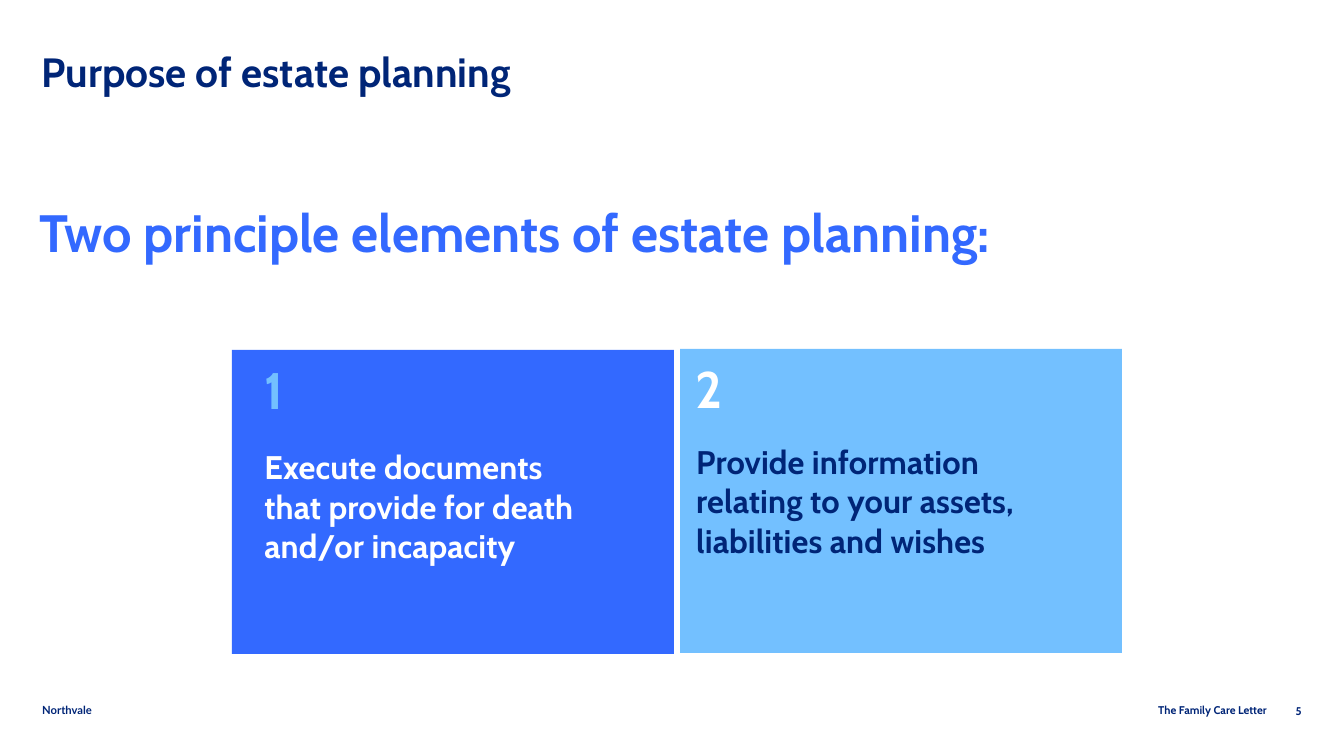
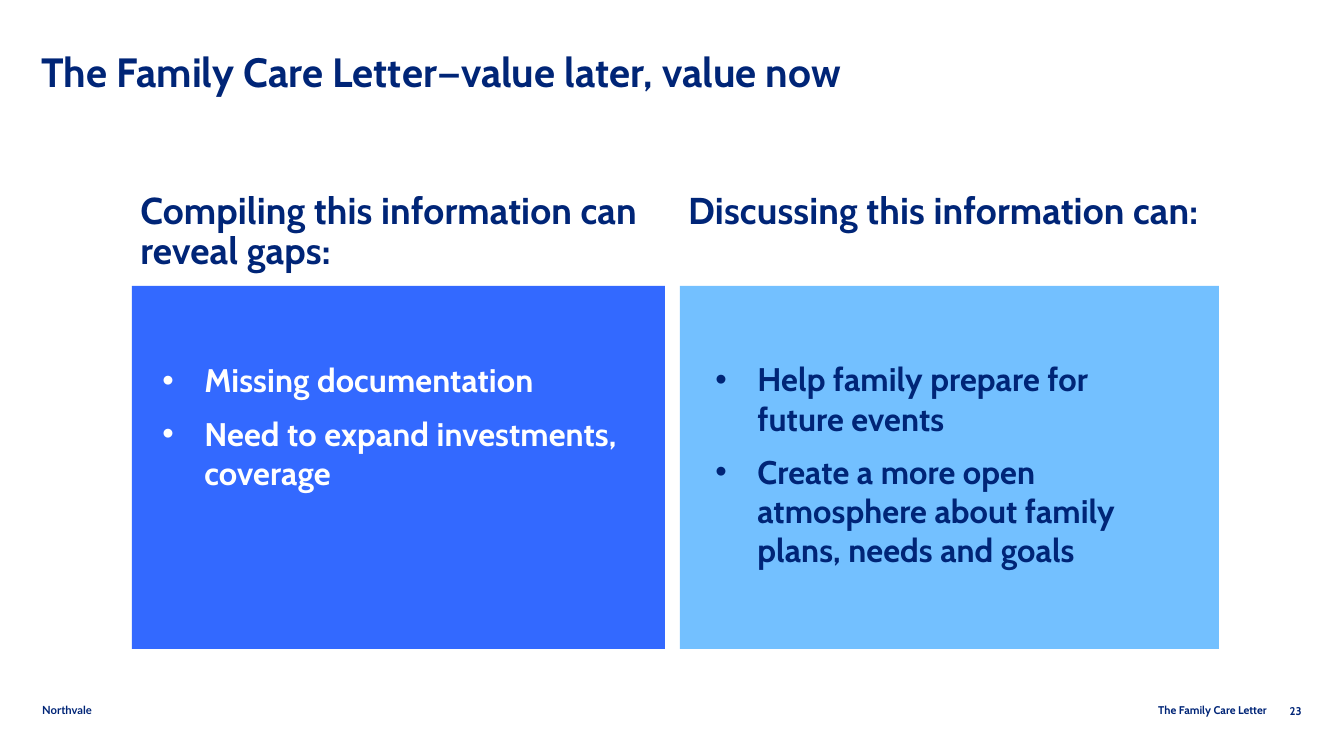
from dataclasses import dataclass

from lxml.etree import SubElement
from pptx import Presentation
from pptx.dml.color import RGBColor
from pptx.enum.shapes import MSO_CONNECTOR, MSO_SHAPE
from pptx.enum.text import MSO_ANCHOR, MSO_AUTO_SIZE, PP_ALIGN
from pptx.oxml.ns import qn
from pptx.slide import Slide
from pptx.util import Emu, Pt

DPI = 84
COLORS = {"navy": "002577", "blue": "3369FF", "sky": "73C0FF",
          "white": "FFFFFF", "rule": "336AFF"}
LEAD = Pt(33.6)
HANG = 42
Box = tuple[int, int, int, int]


@dataclass
class Panel:
    box: Box
    color: str


@dataclass
class Text:
    box: Box
    lines: list[str]
    size: float
    color: str = "navy"
    lead: float | Pt = LEAD
    track: int = 10
    holder: int | None = None
    bullet: bool = False
    font: str = "Cabin"
    align: PP_ALIGN = PP_ALIGN.LEFT
    anchor: MSO_ANCHOR = MSO_ANCHOR.TOP


@dataclass
class Page:
    title: str
    number: str
    panels: list[Panel]
    texts: list[Text]


def px(n: int) -> Emu:
    return Emu(round(n * 914400 / DPI))


def rgb(name: str) -> RGBColor:
    return RGBColor.from_string(COLORS[name])


def set_bullet(para, on: bool) -> None:
    props = para._p.get_or_add_pPr()
    hang = px(HANG) if on else 0
    props.set("marL", str(hang))
    props.set("indent", str(-hang))
    if on:
        SubElement(props, qn("a:buFont"), typeface="Arial")
        SubElement(props, qn("a:buChar"), char="•")
    else:
        SubElement(props, qn("a:buNone"))


def add_panel(slide: Slide, panel: Panel) -> None:
    shape = slide.shapes.add_shape(MSO_SHAPE.RECTANGLE, *map(px, panel.box))
    shape.shadow.inherit = False
    shape.fill.solid()
    shape.fill.fore_color.rgb = rgb(panel.color)
    shape.line.fill.background()


def add_text(slide: Slide, text: Text) -> None:
    """Fill a placeholder, brought to the front, or a new text box."""
    box = [px(n) for n in text.box]
    if text.holder is None:
        shape = slide.shapes.add_textbox(*box)
    else:
        shape = slide.placeholders[text.holder]
        shape.left, shape.top, shape.width, shape.height = box
        slide.shapes.element.append(shape.element)
    frame = shape.text_frame
    frame.word_wrap = True
    frame.auto_size = MSO_AUTO_SIZE.NONE
    frame.vertical_anchor = text.anchor
    for i, line in enumerate(text.lines):
        para = frame.add_paragraph() if i else frame.paragraphs[0]
        set_bullet(para, text.bullet)
        para.alignment = text.align
        para.line_spacing = text.lead
        para.space_before = Pt(12 if i else 0)
        run = para.add_run()
        run.text = line
        run.font.name = text.font
        run.font.size = Pt(text.size)
        run.font.bold = True
        run.font.color.rgb = rgb(text.color)
        run._r.get_or_add_rPr().set("spc", str(text.track))


def add_rule(slide: Slide, x: int, y: int, width: int) -> None:
    line = slide.shapes.add_connector(
        MSO_CONNECTOR.STRAIGHT, px(x), px(y), px(x + width), px(y))
    line.line.color.rgb = rgb("rule")
    line.line.width = Pt(0.5)
    SubElement(line.element.spPr, qn("a:effectLst"))


def add_foot(slide: Slide, number: str) -> None:
    mid, right = MSO_ANCHOR.MIDDLE, PP_ALIGN.RIGHT
    for text in (
        Text((34, 700, 208, 20), ["Northvale"], 9.6, lead=1.0, track=0,
             font="Lato", anchor=mid),
        Text((822, 700, 453, 20), ["The Family Care Letter"], 9.6, lead=1.0,
             track=0, align=right, anchor=mid),
        Text((1276, 700, 34, 16), [number], 9.6, lead=1.0, track=0,
             align=right),
    ):
        add_text(slide, text)


def add_page(deck, page: Page) -> Slide:
    slide = deck.slides.add_slide(deck.slide_layouts[3])
    for panel in page.panels:
        add_panel(slide, panel)
    title = Text((33, 48, 1165, 28), [page.title], 35, lead=0.9, track=0,
                 holder=0)
    for text in [title, *page.texts]:
        add_text(slide, text)
    add_foot(slide, page.number)
    return slide


PURPOSE = Page(
    "Purpose of estate planning", "5",
    [Panel((232, 350, 442, 304), "blue"), Panel((680, 349, 442, 304), "sky")],
    [
        Text((31, 203, 1206, 143),
             ["Two principle elements of estate planning:"], 45, "blue",
             lead=0.9, track=0, holder=1),
        Text((256, 376, 57, 55), ["1"], 44, "sky"),
        Text((256, 443, 335, 217),
             ["Execute documents that provide for death and/or incapacity"],
             28, "white", holder=2),
        Text((687, 375, 57, 55), ["2"], 44, "white"),
        Text((688, 438, 378, 217),
             ["Provide information relating to your assets, "
              "liabilities and wishes"], 28),
    ],
)

VALUE = Page(
    "The Family Care Letter—value later, value now", "23",
    [Panel((132, 286, 533, 363), "blue"), Panel((680, 286, 539, 363), "sky")],
    [
        Text((132, 189, 532, 97),
             ["Compiling this information can reveal gaps:"], 32),
        Text((680, 189, 539, 97), ["Discussing this information can:"], 32),
        Text((154, 356, 485, 256),
             ["Missing documentation", "Need to expand investments, coverage"],
             28, "white", holder=1, bullet=True),
        Text((707, 355, 483, 256),
             ["Help family prepare for future events",
              "Create a more open atmosphere about family plans, "
              "needs and goals"], 28, holder=2, bullet=True),
    ],
)


def main() -> None:
    deck = Presentation()
    deck.slide_width, deck.slide_height = px(16 * DPI), px(9 * DPI)
    add_page(deck, PURPOSE)
    value = add_page(deck, VALUE)
    add_rule(value, 132, 286, 311)
    deck.save("out.pptx")


if __name__ == "__main__":
    main()
